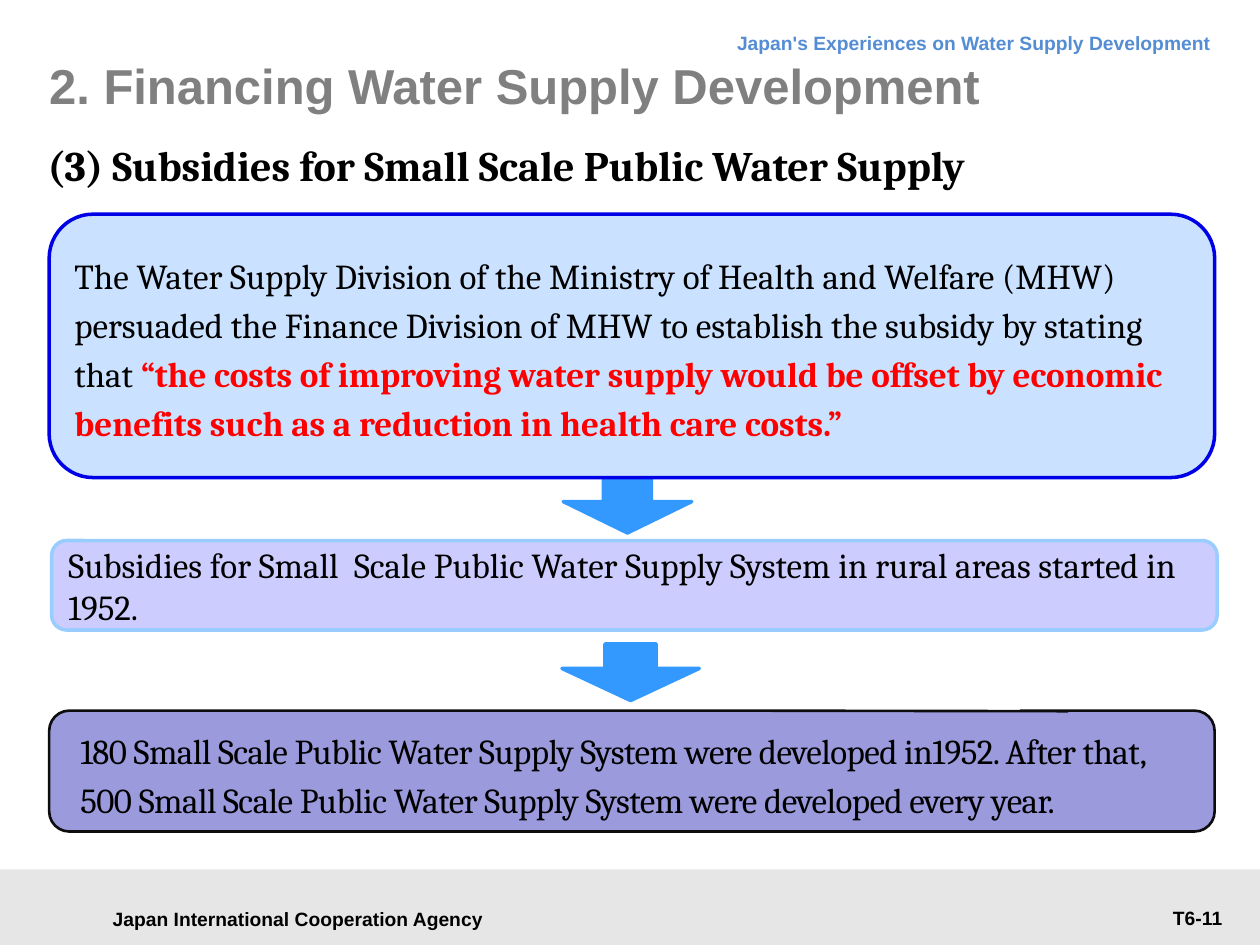
"""Build the slide on subsidies for small scale public water supply."""
from dataclasses import dataclass

from pptx import Presentation
from pptx.dml.color import RGBColor
from pptx.enum.shapes import MSO_SHAPE
from pptx.enum.text import MSO_ANCHOR, PP_ALIGN
from pptx.util import Inches, Pt

RECTANGLE = MSO_SHAPE.RECTANGLE
ROUNDED = MSO_SHAPE.ROUNDED_RECTANGLE
CALLOUT = MSO_SHAPE.ROUNDED_RECTANGULAR_CALLOUT
DOWN_ARROW = MSO_SHAPE.DOWN_ARROW
TOP, MIDDLE = MSO_ANCHOR.TOP, MSO_ANCHOR.MIDDLE
LEFT, CENTER, RIGHT = PP_ALIGN.LEFT, PP_ALIGN.CENTER, PP_ALIGN.RIGHT

COLORS = {
    "black": "000000",
    "red": "FF0000",
    "title": "808080",
    "topic": "548DD4",
    "footer": "E6E6E6",
    "arrow": "3399FF",
    "persuasion": "CAE2FF",
    "persuasion_line": "0000E6",
    "start": "CCCCFF",
    "start_line": "99CCFF",
    "result": "9A9ADC",
    "result_line": "0D0D0D",
}


@dataclass(frozen=True)
class Span:
    """A stretch of text in one format."""

    text: str
    size: float = 20
    font: str = "Cambria"
    color: str = "black"
    bold: bool = False
    spacing: float = 0


@dataclass(frozen=True)
class Words:
    """One paragraph and the frame that holds it."""

    spans: tuple[Span, ...]
    align: PP_ALIGN = LEFT
    anchor: MSO_ANCHOR = MIDDLE
    line_points: float | None = None
    insets: tuple[float, float, float, float] = (0.1, 0.05, 0.1, 0.05)


@dataclass(frozen=True)
class Panel:
    """A preset shape, or a plain text box when no kind is given."""

    at: tuple[float, float, float, float]
    kind: MSO_SHAPE | None = None
    fill: str = ""
    line: str = ""
    line_width: float = 2
    adjustments: tuple[float, ...] = ()
    words: Words | None = None


def label(text: str, color: str = "black") -> tuple[Span, ...]:
    """Return the small bold text of the page frame."""
    return (Span(text, 11, "Arial", color, True),)


def arrow(left: float, top: float, width: float, height: float) -> Panel:
    """Return a down arrow between two steps."""
    return Panel((left, top, width, height), DOWN_ARROW, "arrow", "arrow",
                 adjustments=(0.373, 0.566))


PANELS = (
    Panel((0, 6.9, 10, 0.6), RECTANGLE, "footer"),
    Panel((0.71, 7.12, 3.31, 0.34),
          words=Words(label("Japan International Cooperation Agency"), CENTER)),
    Panel((2.72, 0.13, 6.99, 0.38),
          words=Words(label("Japan's Experiences on Water Supply Development", "topic"),
                      RIGHT, TOP, 18)),
    Panel((8.23, 7.14, 1.57, 0.29), words=Words(label("T6-11"), RIGHT, TOP)),
    arrow(4.47, 3.79, 1.02, 0.44),
    Panel((0.39, 0.28, 8.98, 0.79),
          words=Words((Span("2. Financing Water Supply Development", 28, "Arial",
                            "title", True),), insets=(0, 0, 0, 0))),
    Panel((0.39, 5.64, 9.25, 0.96), CALLOUT, "result", "result_line", 1.5,
          (0.374, -0.495, 0.167),
          Words((Span("180 Small Scale Public Water Supply System were developed in1952. "
                      "After that, 500 Small Scale Public Water Supply System were "
                      "developed every year.", spacing=-0.3),),
                line_points=28, insets=(0.2, 0.04, 0.12, 0.04))),
    arrow(4.46, 5.11, 1.09, 0.45),
    Panel((0.39, 1.7, 9.25, 2.09), ROUNDED, "persuasion", "persuasion_line",
          words=Words((Span("The Water Supply Division of the Ministry of Health and "
                            "Welfare (MHW) persuaded the Finance Division of MHW to "
                            "establish the subsidy by stating that "),
                       Span("“the costs of improving water supply would be offset by "
                            "economic benefits such as a reduction in health care costs.”",
                            color="red", bold=True)), line_points=28)),
    Panel((0.41, 4.29, 9.25, 0.71), ROUNDED, "start", "start_line",
          words=Words((Span("Subsidies for Small  Scale Public Water Supply System in "
                            "rural areas started in 1952."),))),
    Panel((0.28, 1.06, 8.43, 0.41),
          words=Words((Span("(3) Subsidies for Small Scale Public Water Supply", 24,
                            bold=True),), LEFT, TOP, 32, (0.1, 0, 0, 0))),
)


def rgb(name: str) -> RGBColor:
    """Return the named colour."""
    return RGBColor.from_string(COLORS[name])


def set_all(target, values: dict) -> None:
    """Set each attribute of the target."""
    for name, value in values.items():
        setattr(target, name, value)


def write_words(frame, words: Words) -> None:
    """Write one formatted paragraph into a text frame."""
    sides = ("margin_left", "margin_top", "margin_right", "margin_bottom")
    set_all(frame, {"word_wrap": True, "vertical_anchor": words.anchor}
            | dict(zip(sides, map(Inches, words.insets))))
    para = frame.paragraphs[0]
    para.alignment = words.align
    if words.line_points:
        para.line_spacing = Pt(words.line_points)
    for span in words.spans:
        run = para.add_run()
        run.text = span.text
        set_all(run.font, {"name": span.font, "size": Pt(span.size), "bold": span.bold})
        run.font.color.rgb = rgb(span.color)
        if span.spacing:
            run.font._element.set("spc", str(round(span.spacing * 100)))


def draw_panel(page, panel: Panel) -> None:
    """Draw one panel with its words."""
    place = map(Inches, panel.at)
    if panel.kind is None:
        box = page.shapes.add_textbox(*place)
    else:
        box = page.shapes.add_shape(panel.kind, *place)
        box.shadow.inherit = False
        box.fill.solid()
        box.fill.fore_color.rgb = rgb(panel.fill)
        if panel.line:
            box.line.color.rgb = rgb(panel.line)
            box.line.width = Pt(panel.line_width)
        else:
            box.line.fill.background()
        for index, value in enumerate(panel.adjustments):
            box.adjustments[index] = value
    if panel.words:
        write_words(box.text_frame, panel.words)


def main() -> None:
    """Build and save the deck."""
    deck = Presentation()
    set_all(deck, {"slide_width": Inches(10), "slide_height": Inches(7.5)})
    page = deck.slides.add_slide(deck.slide_layouts[6])
    for panel in PANELS:
        draw_panel(page, panel)
    deck.save("out.pptx")


if __name__ == "__main__":
    main()
